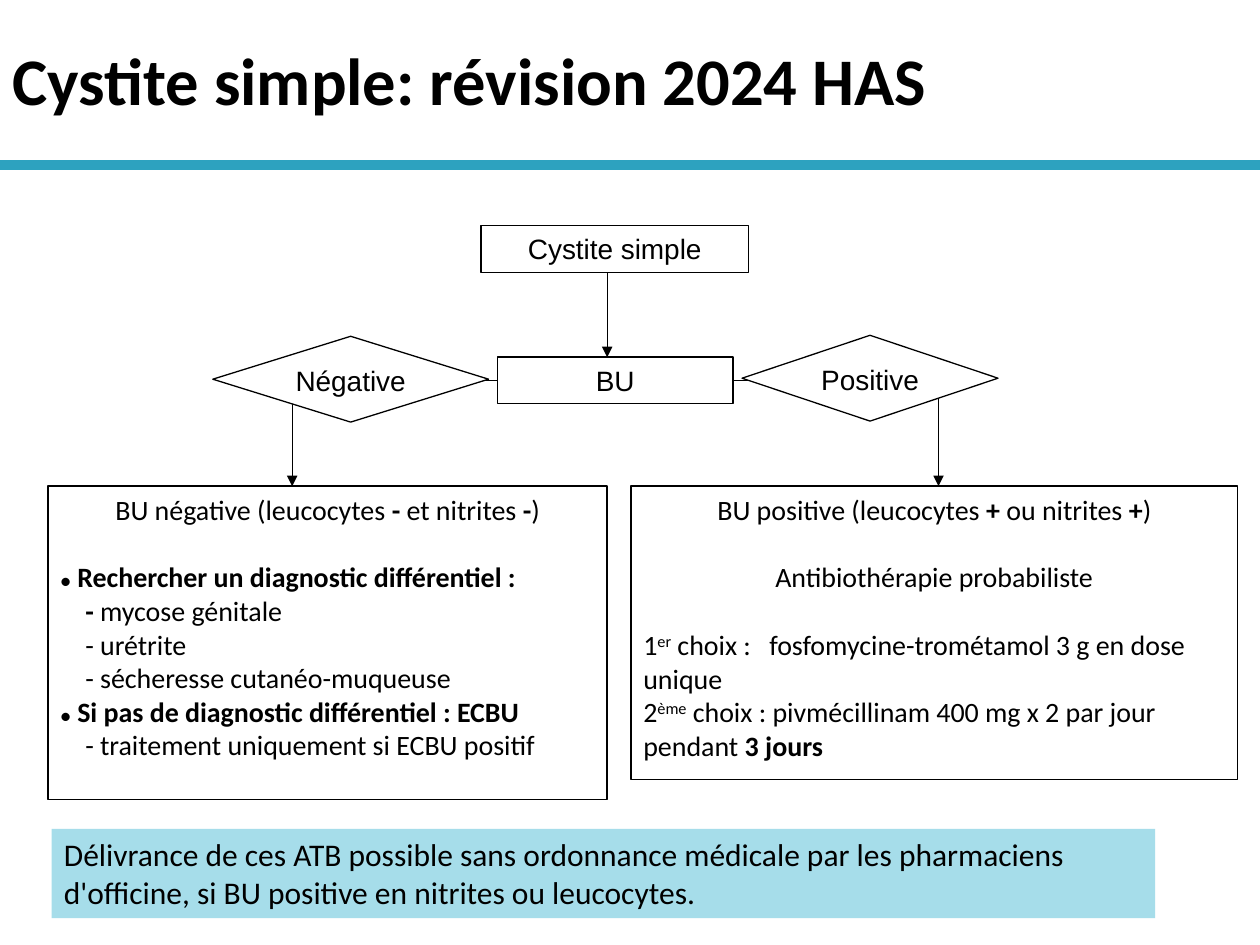
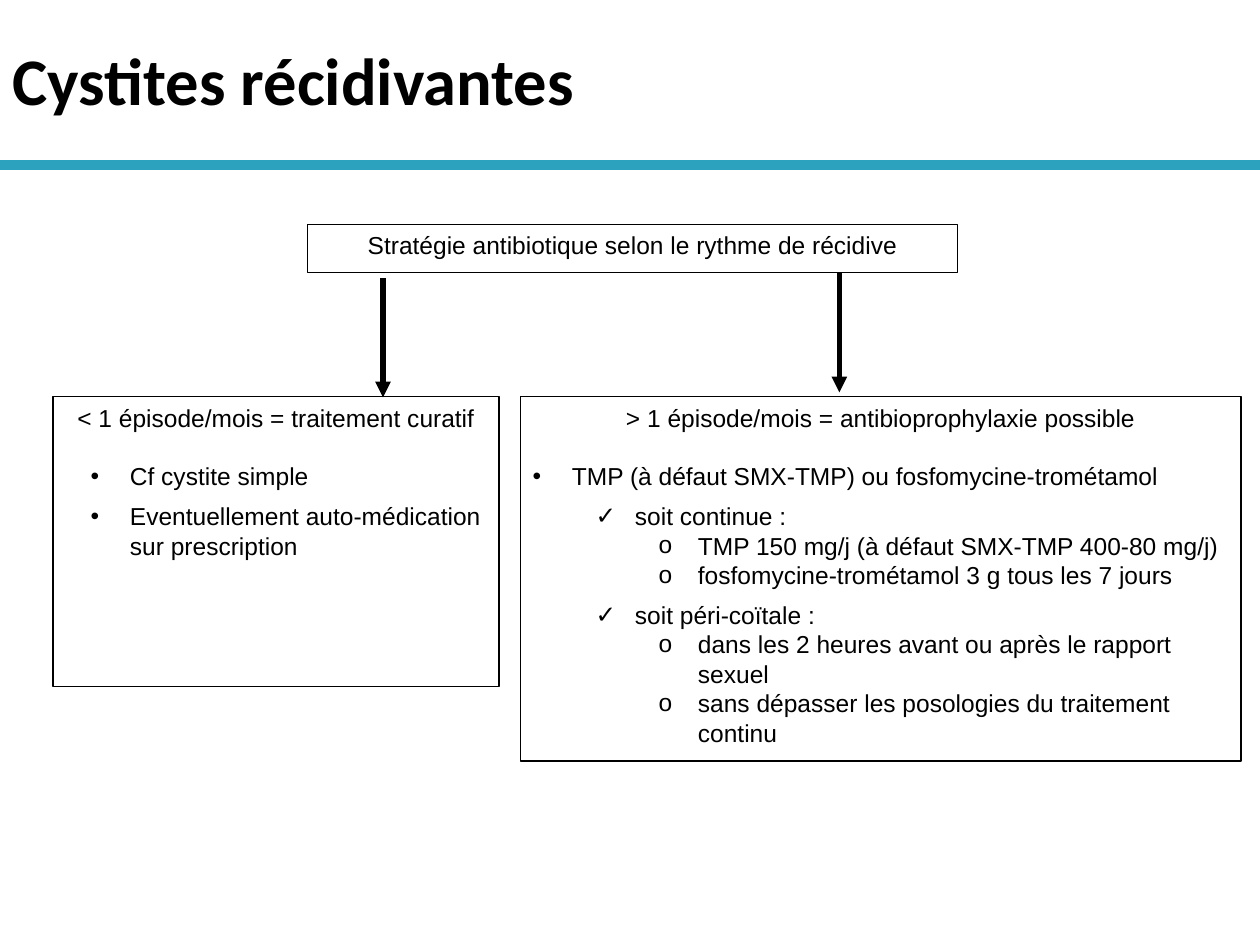
"""Build two slides on the treatment of cystitis."""
import pptx
import pptx.dml.color
import pptx.enum.shapes
import pptx.enum.text
import pptx.oxml
import pptx.oxml.ns
import pptx.util

Cm, Pt = pptx.util.Cm, pptx.util.Pt
RGB = pptx.dml.color.RGBColor.from_string
KIND = pptx.enum.shapes.MSO_SHAPE
ALIGN = pptx.enum.text.PP_ALIGN
INK = {"text": "000000", "band": "2DA2BF", "note": "A6DDEA", "paper": "FFFFFF"}
SANS, BODY = "Arial", "Calibri"
HANG = 0.79
STEP = 1.27
BOLD = {"bold": True}
RAISED = {"raised": True}


def add_xml(parent, tag, **attrs):
    """Append an empty drawing element with the given attributes."""
    node = pptx.oxml.parse_xml(f"<a:{tag} {pptx.oxml.ns.nsdecls('a')}/>")
    for name, value in attrs.items():
        node.set(name, value)
    parent.append(node)


def write(frame, *parts, size=16, font=BODY, bold=False, center=False,
          left=0, mark=None, after=0):
    """Add a paragraph; a part is a string or a (string, format) pair."""
    para = frame.paragraphs[0]
    if para.runs:
        para = frame.add_paragraph()
    para.alignment = ALIGN.CENTER if center else ALIGN.LEFT
    para.space_after = Pt(after)
    props = para._p.get_or_add_pPr()
    props.set("marL", str(Cm(left)))
    props.set("indent", str(-Cm(HANG) if mark else 0))
    if mark:
        add_xml(props, "buFont", typeface=SANS)
        add_xml(props, "buChar", char=mark)
    for part in parts:
        words, extra = (part, {}) if isinstance(part, str) else part
        run = para.add_run()
        run.text = words
        run.font.name = font
        run.font.size = Pt(extra.get("size", size))
        run.font.bold = extra.get("bold", bold)
        run.font.color.rgb = RGB(INK["text"])
        if extra.get("raised"):
            run.font._element.set("baseline", "30000")


def add_box(slide, x, y, wide, high, kind=KIND.RECTANGLE, fill="paper", edge=True):
    """Add a filled shape whose text starts at the top."""
    box = slide.shapes.add_shape(kind, Cm(x), Cm(y), Cm(wide), Cm(high))
    box.shadow.inherit = False
    box.fill.solid()
    box.fill.fore_color.rgb = RGB(INK[fill])
    if edge:
        box.line.color.rgb = RGB(INK["text"])
        box.line.width = Pt(0.75)
    else:
        box.line.fill.background()
    box.text_frame.word_wrap = True
    box.text_frame.vertical_anchor = pptx.enum.text.MSO_ANCHOR.TOP
    return box


def add_label(slide, words, *place, size=16, **look):
    """Add a shape with one centred line of text."""
    box = add_box(slide, *place, **look)
    write(box.text_frame, words, size=size, font=SANS, center=True)
    return box


def add_line(slide, x1, y1, x2, y2, width=0.75, color="text", arrow=False):
    """Add a straight line, with an arrowhead at its end if asked."""
    line = slide.shapes.add_connector(
        pptx.enum.shapes.MSO_CONNECTOR.STRAIGHT, Cm(x1), Cm(y1), Cm(x2), Cm(y2))
    line.line.color.rgb = RGB(INK[color])
    line.line.width = Pt(width)
    if arrow:
        add_xml(line.line._get_or_add_ln(), "tailEnd", type="triangle")
    add_xml(line._element.spPr, "effectLst")
    return line


def add_slide(deck, title):
    """Add a blank slide with the title and the band below it."""
    slide = deck.slides.add_slide(deck.slide_layouts[6])
    add_line(slide, 0, 3.33, 25.4, 3.33, width=6, color="band")
    frame = slide.shapes.add_textbox(0, 0, Cm(25.4), Cm(3.18)).text_frame
    frame.word_wrap = True
    frame.vertical_anchor = pptx.enum.text.MSO_ANCHOR.MIDDLE
    write(frame, title, size=38, bold=True)
    return slide


def add_simple(deck):
    """Add the decision tree for simple cystitis."""
    slide = add_slide(deck, "Cystite simple: révision 2024 HAS")
    row, top = 7.67, 9.8
    add_label(slide, "Cystite simple", 9.7, 4.55, 5.39, 0.94)
    test = add_label(slide, "BU", 10.03, 7.2, 4.75, 0.94)
    add_line(slide, 12.24, 5.49, 12.24, 7.2, arrow=True)

    good = add_box(slide, 12.72, top, 12.23, 5.91).text_frame
    write(good, "BU positive (leucocytes ", ("+", BOLD), " ou nitrites ",
          ("+", BOLD), ")", center=True, after=19.5)
    write(good, "Antibiothérapie probabiliste", center=True, after=19.5)
    write(good, "1", ("er", RAISED),
          " choix : \tfosfomycine-trométamol 3 g en dose unique")
    write(good, "2", ("ème", RAISED),
          " choix : pivmécillinam 400 mg x 2 par jour pendant ", ("3 jours", BOLD))

    bad = add_box(slide, 0.97, top, 11.27, 6.32).text_frame
    write(bad, "BU négative (leucocytes ", ("-", BOLD), " et nitrites ",
          ("-", BOLD), ")", center=True, after=19.5)
    dot = ("●", {"size": 10, "bold": True})
    write(bad, dot, " Rechercher un diagnostic différentiel :", bold=True)
    write(bad, ("-", BOLD), " mycose génitale", left=0.5)
    for item in ("urétrite", "sécheresse cutanéo-muqueuse"):
        write(bad, "- " + item, left=0.5)
    write(bad, dot, " Si pas de diagnostic différentiel : ECBU", bold=True)
    write(bad, "- traitement uniquement si ECBU positif", left=0.5)

    for x, side in ((5.89, 1), (18.92, 3)):
        add_line(slide, x, row, x, top, arrow=True)
        add_line(slide, 12.4, row, x, row).begin_connect(test, side)
    for words, x, y, wide in (("Négative", 4.29, 6.78, 5.56),
                              ("Positive", 14.96, 6.76, 5.16)):
        add_label(slide, words, x, y, wide, 1.73, kind=KIND.FLOWCHART_DECISION)

    note = add_box(slide, 1.04, 16.71, 22.25, 1.8, fill="note", edge=False)
    write(note.text_frame, "Délivrance de ces ATB possible sans ordonnance médicale "
          "par les pharmaciens d'officine, si BU positive en nitrites ou leucocytes.",
          size=18)


def add_repeat(deck):
    """Add the strategy for recurrent cystitis."""
    slide = add_slide(deck, "Cystites récidivantes")
    look = {"size": 14, "font": SANS}
    rare = add_box(slide, 1.07, 8, 8.99, 5.84).text_frame
    write(rare, "< 1 épisode/mois = traitement curatif", center=True, after=16.5, **look)
    write(rare, "Cf cystite simple", left=1.3, mark="•", after=6, **look)
    write(rare, "Eventuellement auto-médication sur prescription",
          left=1.3, mark="•", **look)

    often = add_box(slide, 10.49, 8, 14.53, 7.34).text_frame
    write(often, "> 1 épisode/mois = antibioprophylaxie possible",
          center=True, after=16.5, **look)
    marks = "•✓o"
    for level, after, words in (
            (0, 6, "TMP (à défaut SMX-TMP) ou fosfomycine-trométamol"),
            (1, 0, "soit continue :"),
            (2, 0, "TMP 150 mg/j (à défaut SMX-TMP 400-80 mg/j)"),
            (2, 6, "fosfomycine-trométamol 3 g tous les 7 jours"),
            (1, 0, "soit péri-coïtale :"),
            (2, 0, "dans les 2 heures avant ou après le rapport sexuel"),
            (2, 0, "sans dépasser les posologies du traitement continu")):
        write(often, words, left=HANG + level * STEP, mark=marks[level],
              after=after, **look)

    add_label(slide, "Stratégie antibiotique selon le rythme de récidive",
              6.2, 4.52, 13.11, 0.97, size=14)
    for x, y in ((7.72, 5.61), (16.92, 5.51)):
        add_line(slide, x, y, x, y + 2.4, width=3, arrow=True)


def main():
    """Build and save the deck."""
    deck = pptx.Presentation()
    deck.slide_width, deck.slide_height = Cm(25.4), Cm(19.05)
    add_simple(deck)
    add_repeat(deck)
    deck.save("out.pptx")


if __name__ == "__main__":
    main()
